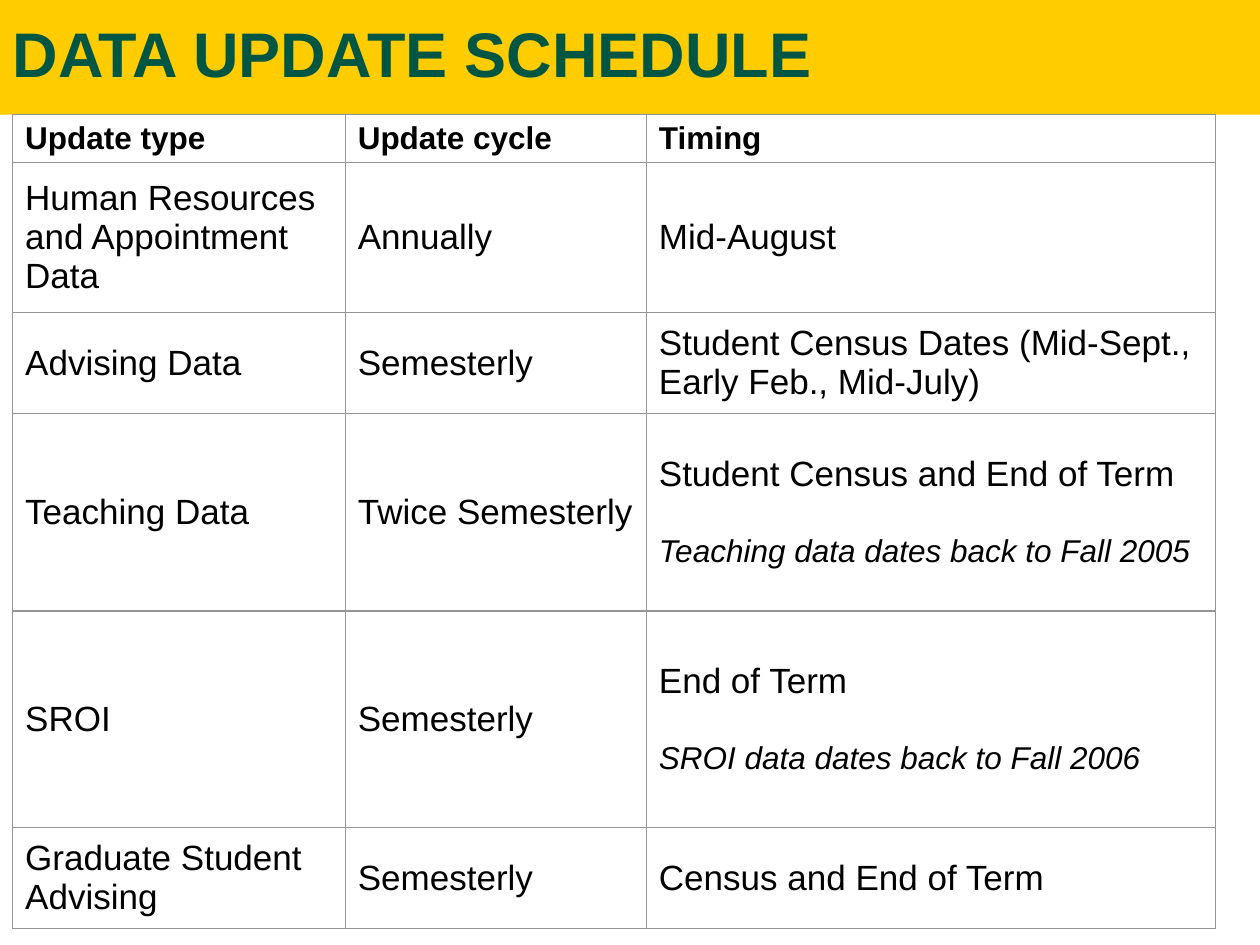
from lxml.etree import SubElement
from pptx import Presentation
from pptx.dml.color import RGBColor
from pptx.enum.text import MSO_ANCHOR as Anchor, MSO_AUTO_SIZE as AutoSize, PP_ALIGN as Align
from pptx.oxml.ns import qn
from pptx.util import Inches, Pt

COLUMN_WIDTHS = [2.64, 2.39, 4.52]
ROW_HEIGHTS = [0.34, 1.19, 0.8, 1.57, 1.72, 0.8]
SCHEDULE = [
    ["Update type", "Update cycle", "Timing"],
    ["Human Resources and Appointment Data", "Annually", "Mid-August"],
    ["Advising Data", "Semesterly", "Student Census Dates (Mid-Sept., Early Feb., Mid-July)"],
    ["Teaching Data", "Twice Semesterly",
     "Student Census and End of Term\nTeaching data dates back to Fall 2005"],
    ["SROI", "Semesterly", "End of Term\nSROI data dates back to Fall 2006"],
    ["Graduate Student Advising", "Semesterly", "Census and End of Term"],
]


def color(value):
    return RGBColor.from_string(value)


class SlideBuilder:
    font = "Arial"
    gold = "FFCC00"
    green = "005643"
    black = "000000"
    white = "FFFFFF"
    gray = "939598"

    def __init__(self, slide):
        self.slide = slide

    def format(self, paragraph, size, shade, bold=False, italic=False):
        font = paragraph.font
        font.name = self.font
        font.size = Pt(size)
        font.bold = bold
        font.italic = italic
        font.color.rgb = color(shade)
        paragraph.alignment = Align.LEFT

    def title(self, text, left, top, width, height):
        shape = self.slide.shapes.title
        shape.left, shape.top = Inches(left), Inches(top)
        shape.width, shape.height = Inches(width), Inches(height)
        shape.fill.solid()
        shape.fill.fore_color.rgb = color(self.gold)
        frame = shape.text_frame
        frame.text = text
        frame.word_wrap = True
        frame.auto_size = AutoSize.NONE
        frame.vertical_anchor = Anchor.MIDDLE
        paragraph = frame.paragraphs[0]
        paragraph.line_spacing = 0.9
        self.format(paragraph, 36, self.green, bold=True)

    def borders(self, cell):
        properties = cell._tc.get_or_add_tcPr()
        for side in ("lnL", "lnR", "lnT", "lnB"):
            line = SubElement(properties, qn(f"a:{side}"), w=str(Pt(0.75)))
            fill = SubElement(line, qn("a:solidFill"))
            SubElement(fill, qn("a:srgbClr"), val=self.gray)

    def cell(self, cell, text, header):
        self.borders(cell)
        cell.fill.solid()
        cell.fill.fore_color.rgb = color(self.white)
        cell.vertical_anchor = Anchor.MIDDLE
        cell.text = text
        first, *notes = cell.text_frame.paragraphs
        self.format(first, 18 if header else 20, self.black, bold=header)
        for note in notes:
            self.format(note, 18, self.black, italic=True)
            note.space_before = Pt(23)

    def table(self, rows, left, top, widths, heights):
        table = self.slide.shapes.add_table(
            len(rows), len(widths), Inches(left), Inches(top),
            Inches(sum(widths)), Inches(sum(heights))).table
        table.horz_banding = False
        for column, width in zip(table.columns, widths):
            column.width = Inches(width)
        for index, (row, height, texts) in enumerate(zip(table.rows, heights, rows)):
            row.height = Inches(height)
            for cell, text in zip(row.cells, texts):
                self.cell(cell, text, header=index == 0)


def main():
    presentation = Presentation()
    presentation.slide_width = Inches(10)
    presentation.slide_height = Inches(7.5)
    builder = SlideBuilder(presentation.slides.add_slide(presentation.slide_layouts[5]))
    builder.title("DATA UPDATE SCHEDULE", 0, 0, 10, 0.91)
    builder.table(SCHEDULE, 0.1, 0.91, COLUMN_WIDTHS, ROW_HEIGHTS)
    presentation.save("out.pptx")


if __name__ == "__main__":
    main()
